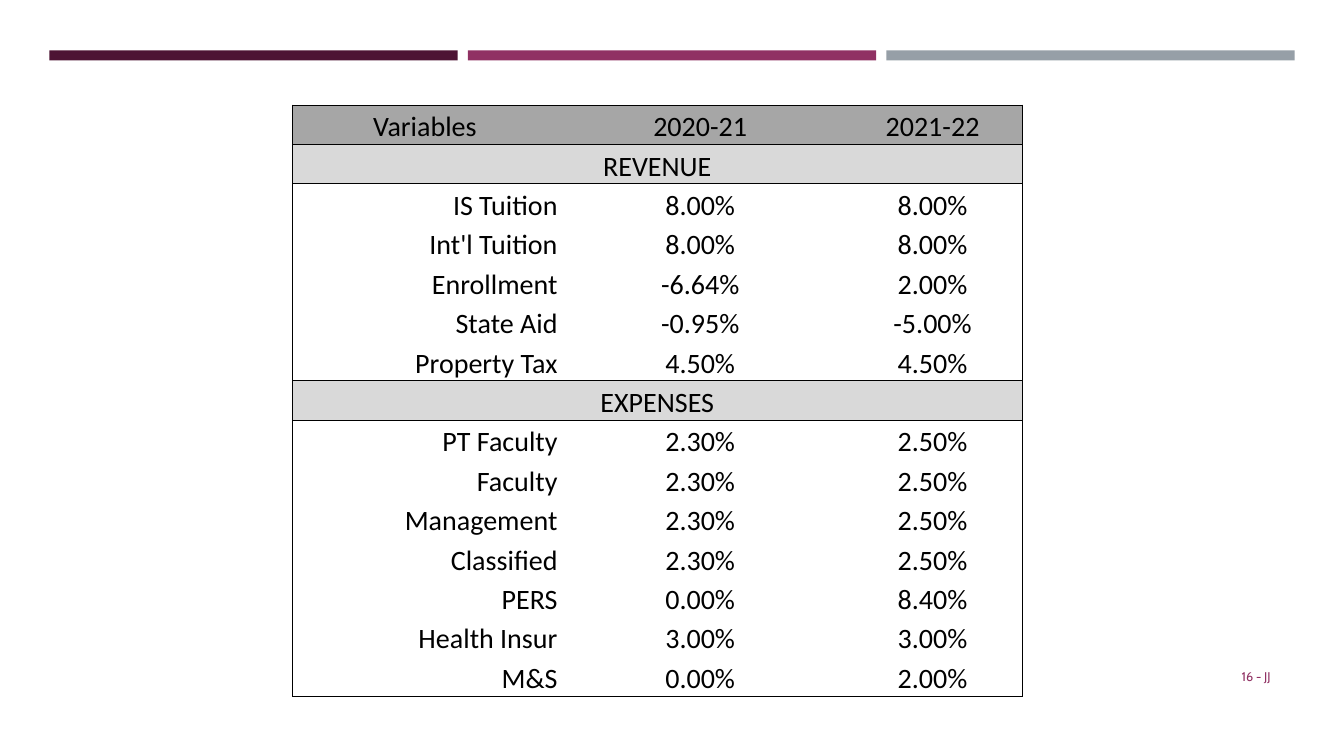
from lxml.etree import SubElement
from pptx import Presentation
from pptx.dml.color import RGBColor
from pptx.enum.shapes import MSO_SHAPE
from pptx.enum.text import MSO_ANCHOR as Anchor, PP_ALIGN as Align
from pptx.oxml.ns import qn
from pptx.util import Emu, Pt

PX = 9144  # EMU per px, at 100 px to the inch

BLACK = "000000"
PURPLE = "903163"
BARS = [(49, "4D1434"), (464, PURPLE), (879, "969FA7")]

COLUMN_WIDTHS = [263, 283, 178]
HEADER_FILL = "A6A6A6"
SECTION_FILL = "D9D9D9"
ROWS = [
    ("Variables", "2020-21", "2021-22"),
    ("REVENUE",),
    ("IS Tuition", "8.00%", "8.00%"),
    ("Int'l Tuition", "8.00%", "8.00%"),
    ("Enrollment", "-6.64%", "2.00%"),
    ("State Aid", "-0.95%", "-5.00%"),
    ("Property Tax", "4.50%", "4.50%"),
    ("EXPENSES",),
    ("PT Faculty", "2.30%", "2.50%"),
    ("Faculty", "2.30%", "2.50%"),
    ("Management", "2.30%", "2.50%"),
    ("Classified", "2.30%", "2.50%"),
    ("PERS", "0.00%", "8.40%"),
    ("Health Insur", "3.00%", "3.00%"),
    ("M&S", "0.00%", "2.00%"),
]


def px(length):
    return Emu(length * PX)


def color(hex_string):
    return RGBColor.from_string(hex_string)


def style_paragraph(paragraph, font_name, size, font_color, alignment):
    paragraph.alignment = alignment
    paragraph.font.name = font_name
    paragraph.font.size = Pt(size)
    paragraph.font.color.rgb = color(font_color)


def add_bar(slide, left, fill):
    bar = slide.shapes.add_shape(MSO_SHAPE.RECTANGLE, px(left), px(50), px(405), px(10))
    bar.shadow.inherit = False
    bar.fill.solid()
    bar.fill.fore_color.rgb = color(fill)
    bar.line.fill.background()


def add_page_label(slide, text):
    box = slide.shapes.add_textbox(px(1155), px(651), px(115), px(40))
    frame = box.text_frame
    frame.word_wrap = True
    frame.vertical_anchor = Anchor.MIDDLE
    frame.text = text
    style_paragraph(frame.paragraphs[0], "Cabin", 9, PURPLE, Align.RIGHT)


def set_borders(cell, **sides):
    """Draw a thin black line on each side that is true, none elsewhere."""
    properties = cell._tc.get_or_add_tcPr()
    for side in ("L", "R", "T", "B"):
        line = SubElement(properties, qn(f"a:ln{side}"), w=str(Pt(0.5)))
        if sides[side]:
            fill = SubElement(line, qn("a:solidFill"))
            SubElement(fill, qn("a:srgbClr"), val=BLACK)
        else:
            SubElement(line, qn("a:noFill"))


def row_fill(index):
    if index == 0:
        return HEADER_FILL
    return SECTION_FILL if len(ROWS[index]) == 1 else None


def format_cell(cell, row, column):
    fill = row_fill(row)
    is_section = len(ROWS[row]) == 1
    last_row, last_column = len(ROWS) - 1, len(COLUMN_WIDTHS) - 1

    # Borders go in before the fill, as the schema orders them
    set_borders(
        cell,
        L=column == 0,
        R=column == last_column or is_section,
        T=bool(fill or row_fill(row - 1)),
        B=bool(row == last_row or fill or row_fill(row + 1)),
    )
    if fill:
        cell.fill.solid()
        cell.fill.fore_color.rgb = color(fill)
    else:
        cell.fill.background()

    cell.margin_left = cell.margin_right = cell.margin_top = cell.margin_bottom = 0
    cell.vertical_anchor = Anchor.BOTTOM
    alignment = Align.RIGHT if column == 0 and not fill else Align.CENTER
    style_paragraph(cell.text_frame.paragraphs[0], "Calibri", 20, BLACK, alignment)


def add_variables_table(slide):
    frame = slide.shapes.add_table(
        len(ROWS), len(COLUMN_WIDTHS), px(290), px(104), px(sum(COLUMN_WIDTHS)), px(587)
    )
    table = frame.table
    table.first_row = table.horz_banding = False
    for column, width in zip(table.columns, COLUMN_WIDTHS):
        column.width = px(width)

    for row, values in enumerate(ROWS):
        for column, value in enumerate(values):
            table.cell(row, column).text = value
        for column in range(len(COLUMN_WIDTHS)):
            format_cell(table.cell(row, column), row, column)
        if len(values) == 1:
            table.cell(row, 0).merge(table.cell(row, len(COLUMN_WIDTHS) - 1))


def main():
    presentation = Presentation()
    presentation.slide_width = px(1333)
    presentation.slide_height = px(750)
    slide = presentation.slides.add_slide(presentation.slide_layouts[6])

    # Top bars
    for left, fill in BARS:
        add_bar(slide, left, fill)

    # Page label and table
    add_page_label(slide, "16 - JJ")
    add_variables_table(slide)

    presentation.save("out.pptx")


if __name__ == "__main__":
    main()
